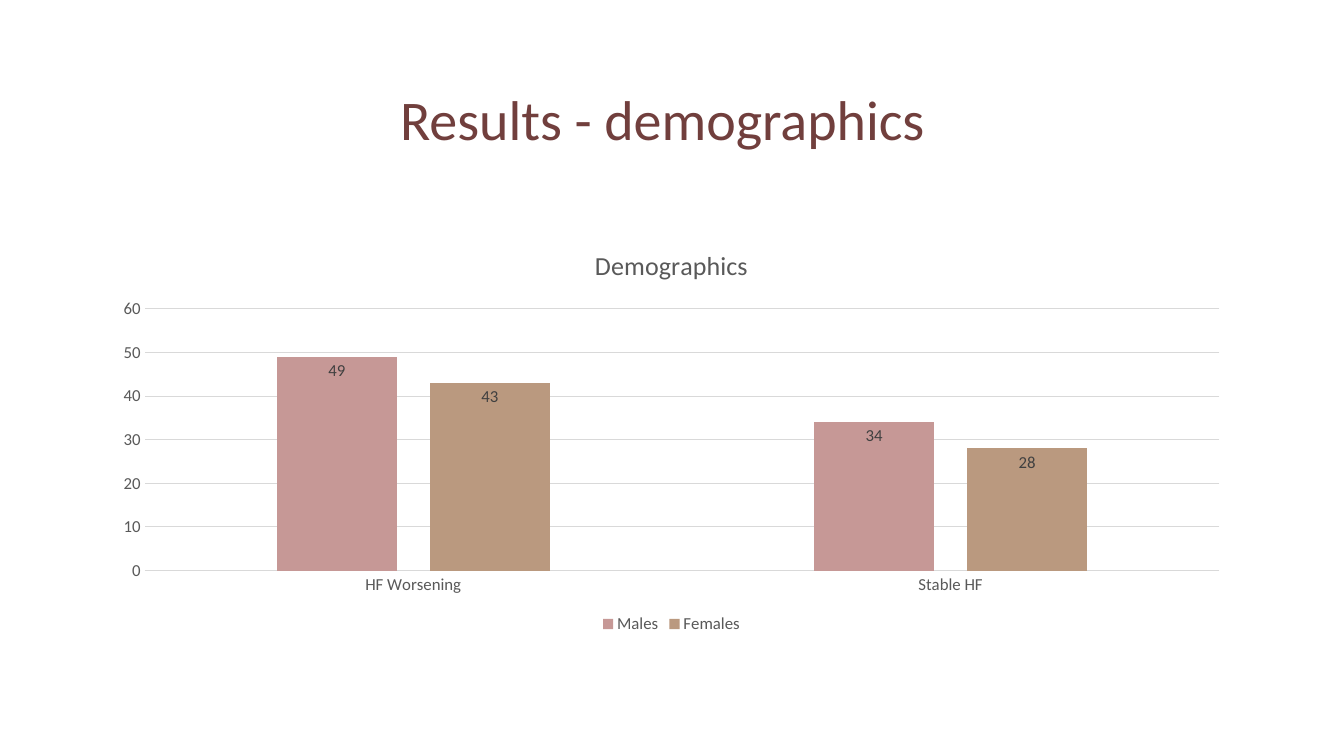
from lxml.etree import SubElement
from pptx import Presentation
from pptx.chart.data import CategoryChartData
from pptx.dml.color import RGBColor
from pptx.enum.chart import XL_CHART_TYPE, XL_LABEL_POSITION, XL_LEGEND_POSITION, XL_TICK_MARK
from pptx.enum.text import MSO_ANCHOR, PP_ALIGN
from pptx.oxml import parse_xml
from pptx.oxml.ns import nsdecls, qn
from pptx.util import Inches, Pt

MAROON = RGBColor(0x71, 0x3F, 0x3D)
ROSE = RGBColor(0xC6, 0x98, 0x96)
TAN = RGBColor(0xBA, 0x99, 0x7F)
GRAY = RGBColor(0x59, 0x59, 0x59)
DARK_GRAY = RGBColor(0x40, 0x40, 0x40)
LIGHT_GRAY = RGBColor(0xD9, 0xD9, 0xD9)

TEXT_OUTLINE = f"""<a:ln {nsdecls('a')} w="9525"><a:solidFill><a:srgbClr val="FFFFFF">
<a:alpha val="10000"/></a:srgbClr></a:solidFill></a:ln>"""
TEXT_SHADOW = f"""<a:effectLst {nsdecls('a')}><a:outerShdw blurRad="38100" dist="38100"
dir="2700000" algn="tl"><a:srgbClr val="000000"><a:alpha val="43000"/></a:srgbClr>
</a:outerShdw></a:effectLst>"""


class SlideBuilder:
    font_name = "Calibri"
    text_size = 12

    def __init__(self, deck):
        self.page = deck.slides.add_slide(deck.slide_layouts[5])

    def style_font(self, font, color, size=None):
        font.name = self.font_name
        font.size = Pt(size or self.text_size)
        font.bold = False
        font.color.rgb = color

    def style_line(self, line):
        line.color.rgb = LIGHT_GRAY
        line.width = Pt(0.75)

    def add_title(self, text, left, top, width, height):
        box = self.page.shapes.title
        box.left, box.top = Inches(left), Inches(top)
        box.width, box.height = Inches(width), Inches(height)
        box.text_frame.vertical_anchor = MSO_ANCHOR.MIDDLE
        para = box.text_frame.paragraphs[0]
        para.alignment = PP_ALIGN.CENTER
        span = para.add_run()
        span.text = text
        self.style_font(span.font, MAROON, 40)
        # Faint outline and soft shadow on the letters
        properties = span.font._element
        properties.insert(0, parse_xml(TEXT_OUTLINE))
        properties.find(qn("a:solidFill")).addnext(parse_xml(TEXT_SHADOW))

    def add_column_chart(self, title, categories, series, left, top, width, height):
        data = CategoryChartData()
        data.categories = categories
        for name, values, _ in series:
            data.add_series(name, values)
        chart = self.page.shapes.add_chart(
            XL_CHART_TYPE.COLUMN_CLUSTERED,
            Inches(left), Inches(top), Inches(width), Inches(height), data).chart
        self.style_font(chart.font, GRAY)

        # Chart title and legend
        chart.has_title = True
        span = chart.chart_title.text_frame.paragraphs[0].add_run()
        span.text = title
        self.style_font(span.font, GRAY, 18.6)
        chart.chart_title.include_in_layout = False
        chart.has_legend = True
        chart.legend.position = XL_LEGEND_POSITION.BOTTOM
        chart.legend.include_in_layout = False
        self.style_font(chart.legend.font, GRAY)

        # Axes
        for axis in (chart.category_axis, chart.value_axis):
            axis.major_tick_mark = axis.minor_tick_mark = XL_TICK_MARK.NONE
            self.style_font(axis.tick_labels.font, GRAY)
        self.style_line(chart.category_axis.format.line)
        chart.value_axis.format.line.fill.background()
        chart.value_axis.has_major_gridlines = True
        self.style_line(chart.value_axis.major_gridlines.format.line)

        # Columns and their labels
        plot = chart.plots[0]
        plot.vary_by_categories = False
        plot.gap_width, plot.overlap = 219, -27
        for columns, (_, _, color) in zip(plot.series, series):
            columns.format.fill.solid()
            columns.format.fill.fore_color.rgb = color
            columns.invert_if_negative = False
            labels = columns.data_labels
            labels.show_value = True
            labels.position = XL_LABEL_POSITION.INSIDE_END
            self.style_font(labels.font, DARK_GRAY)


def main():
    deck = Presentation()
    deck.slide_width, deck.slide_height = Inches(13.33), Inches(7.5)
    slide = SlideBuilder(deck)
    slide.add_title("Results - demographics", 0.91, 0.48, 11.32, 1.38)
    slide.add_column_chart(
        "Demographics",
        ["HF Worsening", "Stable HF"],
        [("Males", (49, 34), ROSE), ("Females", (43, 28), TAN)],
        1, 2.27, 11.32, 4.06)
    deck.save("out.pptx")


if __name__ == "__main__":
    main()
